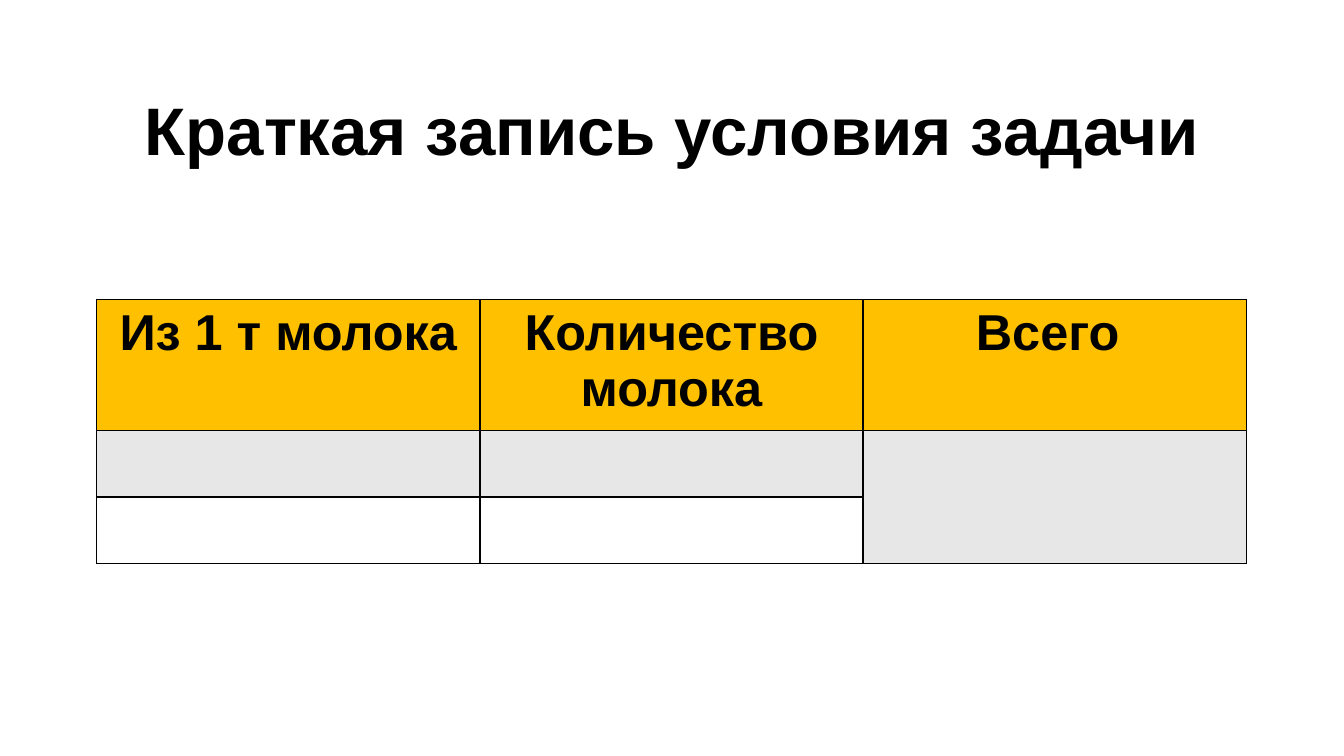
from dataclasses import dataclass

from lxml import etree
from pptx import Presentation
from pptx.dml.color import RGBColor
from pptx.enum.text import MSO_ANCHOR, PP_ALIGN
from pptx.oxml.ns import qn
from pptx.table import _Cell
from pptx.text.text import TextFrame
from pptx.util import Inches, Pt

CENTER = PP_ALIGN.CENTER
MIDDLE = MSO_ANCHOR.MIDDLE
BLACK, GOLD, GRAY, WHITE = "000000", "FFC000", "E7E7E7", "FFFFFF"


@dataclass
class Row:
    height: float
    fills: tuple[str, str, str]
    texts: tuple[str, str, str] = ("", "", "")


ROWS = [
    Row(1.22, (GOLD, GOLD, GOLD), ("Из 1 т молока", "Количество молока", "Всего ")),
    Row(0.66, (GRAY, GRAY, GRAY)),
    Row(0.66, (WHITE, WHITE, GRAY)),
]
COL_WIDTH = 3.8


def color(value: str) -> RGBColor:
    return RGBColor.from_string(value)


def write(frame: TextFrame, text: str, *, size: float, space: float = 1.0) -> None:
    frame.word_wrap = True
    para = frame.paragraphs[0]
    para.alignment = CENTER
    para.line_spacing = space
    run = para.add_run()
    run.text = text
    run.font.name = "Arial"
    run.font.size = Pt(size)
    run.font.bold = True
    run.font.color.rgb = color(BLACK)


def border(cell: _Cell, value: str, width: float) -> None:
    props = cell._tc.get_or_add_tcPr()
    for side in ("lnL", "lnR", "lnT", "lnB"):
        line = etree.SubElement(props, qn(f"a:{side}"), w=str(Pt(width)))
        fill = etree.SubElement(line, qn("a:solidFill"))
        etree.SubElement(fill, qn("a:srgbClr"), val=value)


def paint(cell: _Cell, fill: str) -> None:
    border(cell, BLACK, 1)
    cell.fill.solid()
    cell.fill.fore_color.rgb = color(fill)


def main() -> None:
    deck = Presentation()
    deck.slide_width, deck.slide_height = Inches(13.33), Inches(7.5)
    slide = deck.slides.add_slide(deck.slide_layouts[6])

    # Title
    title = slide.shapes.add_textbox(Inches(0.92), Inches(0.6), Inches(11.5), Inches(1.45))
    title.text_frame.vertical_anchor = MIDDLE
    write(title.text_frame, "Краткая запись условия задачи", size=48, space=0.9)

    # Table
    cols = len(ROWS[0].fills)
    total = sum(row.height for row in ROWS)
    table = slide.shapes.add_table(
        len(ROWS), cols, Inches(0.96), Inches(2.97), Inches(cols * COL_WIDTH), Inches(total)
    ).table
    for col in table.columns:
        col.width = Inches(COL_WIDTH)
    for r, row in enumerate(ROWS):
        table.rows[r].height = Inches(row.height)
        for c, (fill, text) in enumerate(zip(row.fills, row.texts)):
            cell = table.cell(r, c)
            paint(cell, fill)
            if text:
                write(cell.text_frame, text, size=36)
    table.cell(1, 2).merge(table.cell(2, 2))

    deck.save("out.pptx")


if __name__ == "__main__":
    main()
